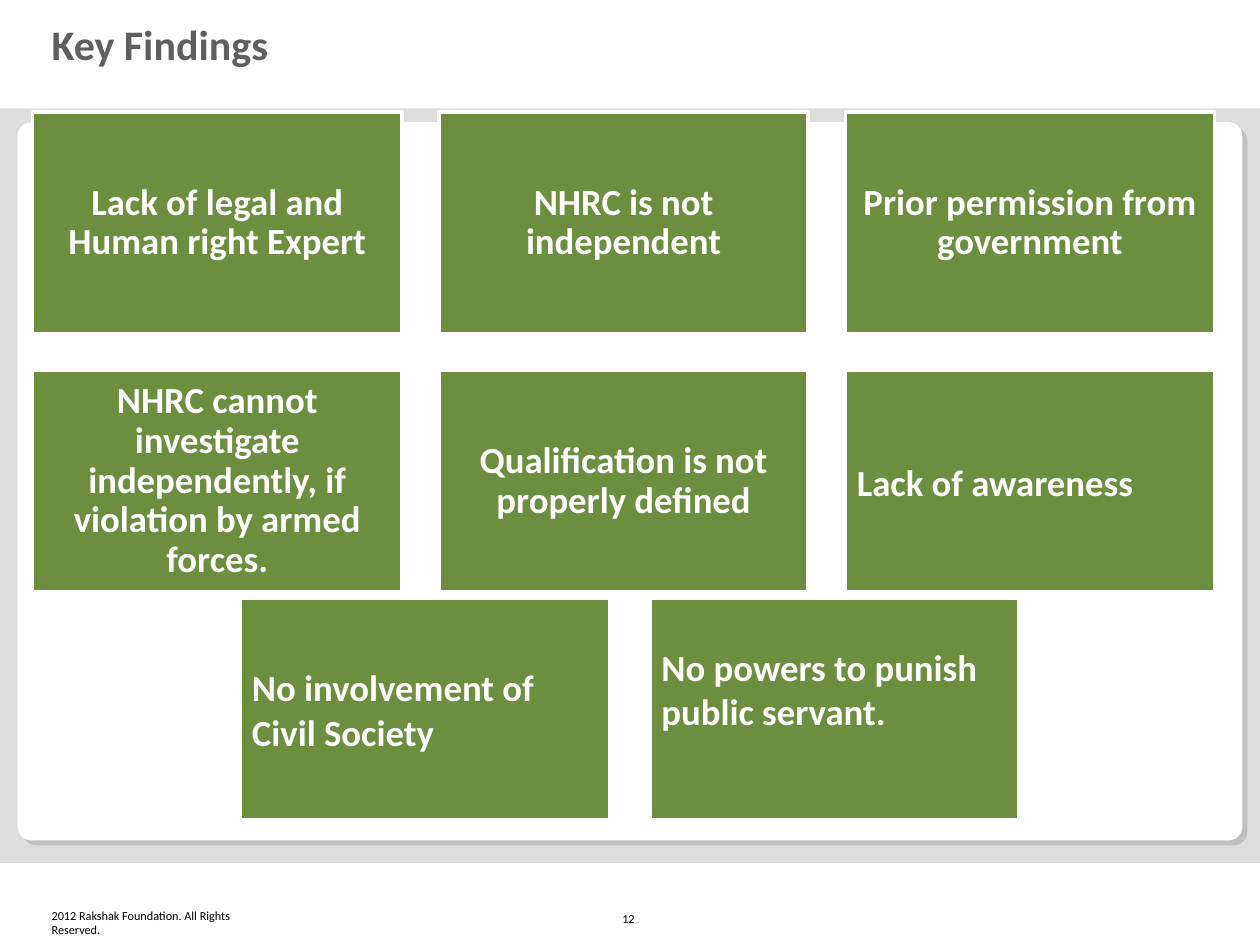
from dataclasses import dataclass

from pptx import Presentation
from pptx.dml.color import RGBColor
from pptx.enum.shapes import MSO_SHAPE
from pptx.enum.text import MSO_ANCHOR, PP_ALIGN
from pptx.util import Inches, Pt

RECT, ROUND = MSO_SHAPE.RECTANGLE, MSO_SHAPE.ROUNDED_RECTANGLE
MIDDLE, BOTTOM = MSO_ANCHOR.MIDDLE, MSO_ANCHOR.BOTTOM
LEFT, CENTER = PP_ALIGN.LEFT, PP_ALIGN.CENTER


@dataclass(frozen=True)
class Theme:
    font: str = "Calibri"
    white: str = "FFFFFF"
    band: str = "DDDDDD"
    shade: str = "C0C0C0"
    green: str = "6C8E3E"
    gray: str = "5F5F5F"
    black: str = "000000"
    head: int = 24
    body: int = 21
    small: int = 7


@dataclass(frozen=True)
class Card:
    text: str
    align: PP_ALIGN = CENTER
    lift: float = 0  # extra bottom margin that raises the text


@dataclass(frozen=True)
class Row:
    left: float
    top: float
    step: float
    cards: tuple[Card, ...]


THEME = Theme()
CARD_W, CARD_H, PAD = 2.93, 1.76, 0.09
ROWS = (
    Row(0.26, 0.89, 3.225, (
        Card("Lack of legal and Human right Expert"),
        Card("NHRC is not independent"),
        Card("Prior permission from government"),
    )),
    Row(0.26, 2.94, 3.225, (
        Card("NHRC cannot investigate independently, if violation by armed forces."),
        Card("Qualification is not properly defined"),
        Card("Lack of awareness", LEFT),
    )),
    Row(1.91, 4.75, 3.25, (
        Card("No involvement of Civil Society", LEFT),
        Card("No powers to punish public servant.", LEFT, 0.32),
    )),
)


def block(slide, kind: MSO_SHAPE, box: tuple, fill: str):
    shape = slide.shapes.add_shape(kind, *map(Inches, box))
    shape.shadow.inherit = False
    shape.fill.solid()
    shape.fill.fore_color.rgb = RGBColor.from_string(fill)
    shape.line.fill.background()
    if kind == ROUND:
        shape.adjustments[0] = 0.019
    return shape


def write(shape, text: str, size: int, color: str, align=LEFT, anchor=BOTTOM,
          bold=False, pads=(0.1, 0.05, 0.1, 0.05), lines=None) -> None:
    frame = shape.text_frame
    frame.word_wrap = True
    frame.vertical_anchor = anchor
    (frame.margin_left, frame.margin_top,
     frame.margin_right, frame.margin_bottom) = map(Inches, pads)
    frame.text = text
    para = frame.paragraphs[0]
    para.alignment = align
    para.space_before = Pt(0)
    if lines:
        para.line_spacing = lines
    font = para.font
    font.name, font.size, font.bold = THEME.font, Pt(size), bold
    font.color.rgb = RGBColor.from_string(color)


def label(slide, box: tuple, text: str, **style) -> None:
    shape = slide.shapes.add_textbox(*map(Inches, box))
    write(shape, text, THEME.small, THEME.black, **style)


def draw_row(slide, row: Row) -> None:
    for i, card in enumerate(row.cards):
        box = (row.left + i * row.step, row.top, CARD_W, CARD_H)
        shape = block(slide, RECT, box, THEME.green)
        shape.line.color.rgb = RGBColor.from_string(THEME.white)
        shape.line.width = Pt(2)
        write(shape, card.text, THEME.body, THEME.white, card.align, MIDDLE,
              bold=True, pads=(PAD, PAD, PAD, PAD + card.lift),
              lines=0.9 if card.align == CENTER else None)


def main() -> None:
    deck = Presentation()
    deck.slide_width, deck.slide_height = Inches(10), Inches(7.5)
    slide = deck.slides.add_slide(deck.slide_layouts[5])

    # Gray band and white panel with its hard shadow
    block(slide, RECT, (0, 0.86, 10, 5.99), THEME.band)
    block(slide, ROUND, (0.18, 1.01, 9.72, 5.7), THEME.shade)
    block(slide, ROUND, (0.14, 0.97, 9.72, 5.7), THEME.white)

    # Title
    title = slide.shapes.title
    title.left, title.top = Inches(0.31), Inches(0.16)
    title.width, title.height = Inches(7.94), Inches(0.44)
    write(title, "Key Findings", THEME.head, THEME.gray, anchor=MIDDLE,
          bold=True, lines=0.85)

    # Finding cards
    for row in ROWS:
        draw_row(slide, row)

    # Footer and page number
    label(slide, (0.41, 7.2, 1.65, 0.24),
          "2012 Rakshak Foundation. All Rights Reserved.", pads=(0, 0, 0, 0))
    label(slide, (4.84, 7.06, 0.32, 0.34), "12")

    deck.save("out.pptx")


if __name__ == "__main__":
    main()
